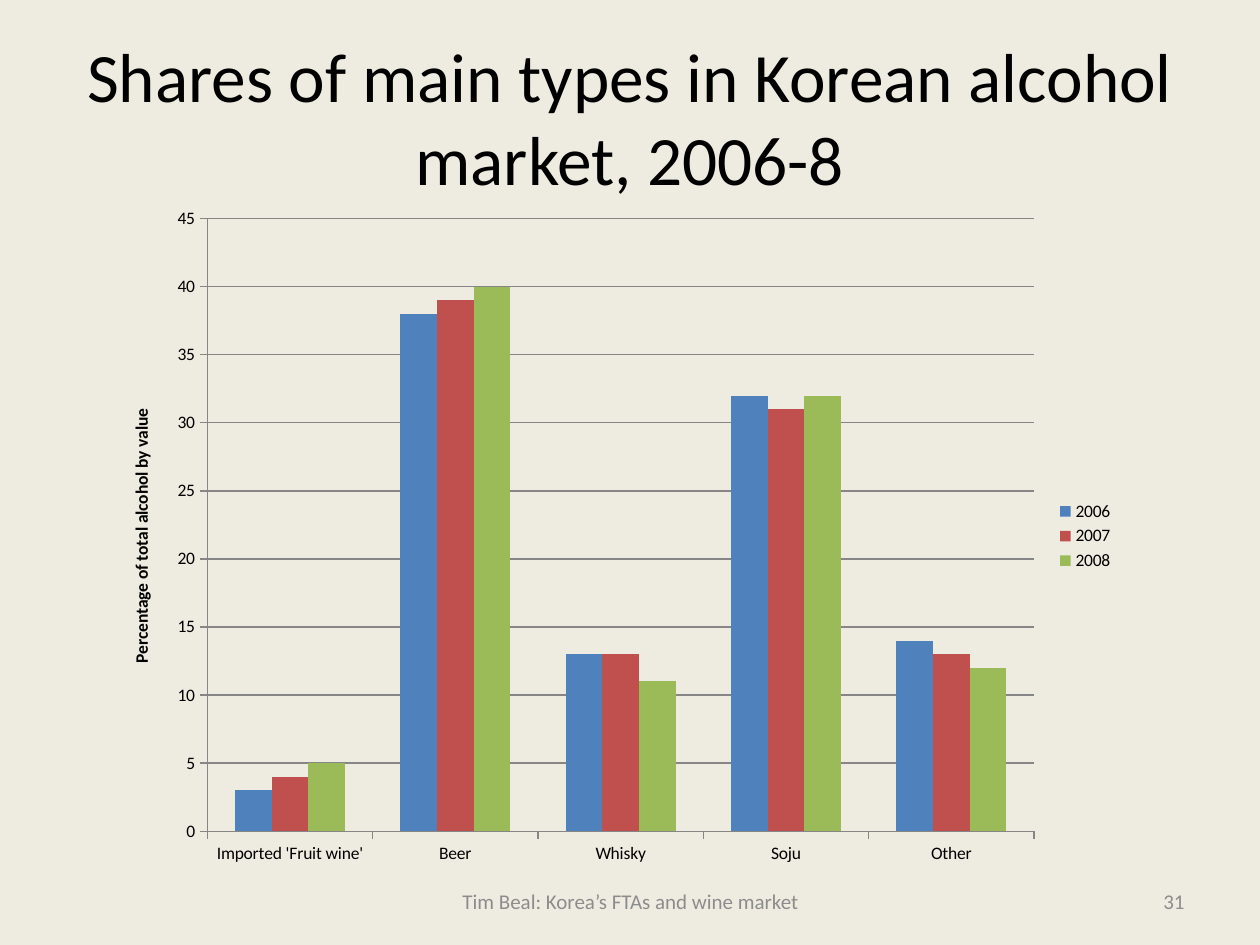
from pptx import Presentation
from pptx.chart.data import CategoryChartData
from pptx.dml.color import RGBColor
from pptx.enum.chart import XL_CHART_TYPE as Kind, XL_LEGEND_POSITION as Side
from pptx.enum.chart import XL_TICK_MARK as Tick
from pptx.enum.text import MSO_ANCHOR as Anchor, PP_ALIGN as Align
from pptx.util import Inches, Pt

FACE = "Calibri"
COLORS = {
    "back": "EEECE1", "ink": "000000", "mute": "8C8C8C", "line": "868686",
    "2006": "4F81BD", "2007": "C0504D", "2008": "9BBB59",
}
TYPES = ["Imported 'Fruit wine'", "Beer", "Whisky", "Soju", "Other"]
SHARES = {
    "2006": [3, 38, 13, 32, 14],
    "2007": [4, 39, 13, 31, 13],
    "2008": [5, 40, 11, 32, 12],
}


def color(name):
    return RGBColor.from_string(COLORS[name])


def style(font, size, ink="ink", bold=False):
    font.name = FACE
    font.size = Pt(size)
    font.bold = bold
    font.color.rgb = color(ink)


def add_text(slide, box, text, size, align, ink="ink"):
    frame = slide.shapes.add_textbox(*map(Inches, box)).text_frame
    frame.word_wrap = True
    frame.vertical_anchor = Anchor.MIDDLE
    para = frame.paragraphs[0]
    para.text = text
    para.alignment = align
    style(para.font, size, ink)


def add_footer(slide, left, top, width, height):
    # Centred source line, page number at the right edge
    add_text(slide, (left + 2.92, top, 3.17, height),
             "Tim Beal: Korea’s FTAs and wine market", 12, Align.CENTER, "mute")
    add_text(slide, (left + width - 2.33, top, 2.33, height),
             "31", 12, Align.RIGHT, "mute")


def add_shares(slide, box):
    data = CategoryChartData(number_format="0")
    data.categories = TYPES
    for year, vals in SHARES.items():
        data.add_series(year, vals)
    chart = slide.shapes.add_chart(
        Kind.COLUMN_CLUSTERED, *map(Inches, box), data).chart
    style(chart.font, 10)
    chart.has_title = False

    # Columns
    plot = chart.plots[0]
    plot.gap_width = 150
    plot.overlap = 0
    plot.vary_by_categories = False
    for row in plot.series:
        row.format.fill.solid()
        row.format.fill.fore_color.rgb = color(row.name)

    # Axes
    vals = chart.value_axis
    vals.minimum_scale, vals.maximum_scale, vals.major_unit = 0, 45, 5
    vals.has_major_gridlines = True
    vals.tick_labels.number_format = "0"
    vals.tick_labels.number_format_is_linked = False
    for part in (vals, chart.category_axis, vals.major_gridlines):
        part.format.line.color.rgb = color("line")
        part.format.line.width = Pt(0.75)
    for axis in (vals, chart.category_axis):
        axis.major_tick_mark = Tick.OUTSIDE
    para = vals.axis_title.text_frame.paragraphs[0]
    para.text = "Percentage of total alcohol by value"
    style(para.font, 10, bold=True)

    # Legend
    chart.has_legend = True
    chart.legend.position = Side.RIGHT
    chart.legend.include_in_layout = False
    style(chart.legend.font, 10)


def main():
    deck = Presentation()
    deck.slide_width, deck.slide_height = Inches(10), Inches(7.5)
    slide = deck.slides.add_slide(deck.slide_layouts[6])
    slide.background.fill.solid()
    slide.background.fill.fore_color.rgb = color("back")
    add_text(slide, (0.5, 0.3, 9, 1.25),
             "Shares of main types in Korean alcohol market, 2006-8",
             39.6, Align.CENTER)
    add_footer(slide, 0.5, 6.95, 9, 0.4)
    add_shares(slide, (0.83, 1.55, 8.11, 5.41))
    deck.save("out.pptx")


if __name__ == "__main__":
    main()
